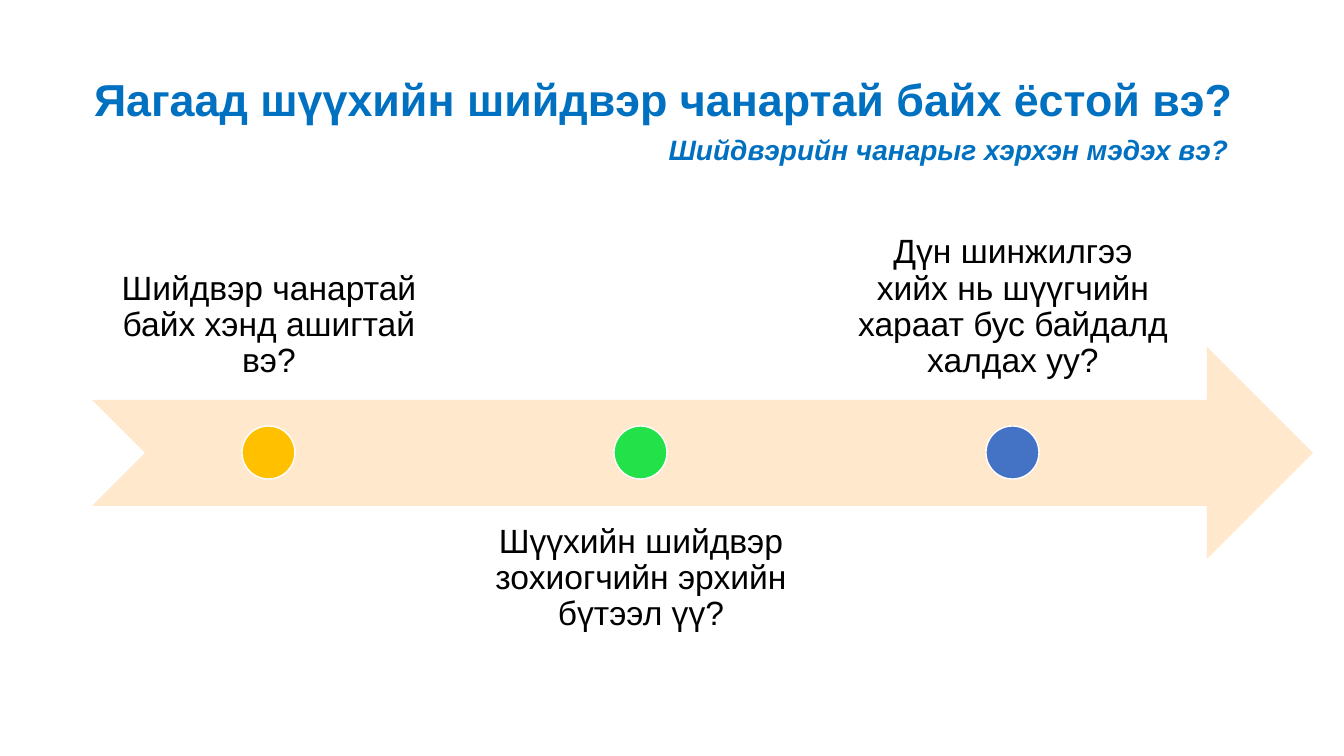
from dataclasses import dataclass

from pptx import Presentation
from pptx.dml.color import RGBColor
from pptx.enum.shapes import MSO_SHAPE
from pptx.enum.text import MSO_ANCHOR, MSO_AUTO_SIZE, PP_ALIGN
from pptx.shapes.autoshape import Shape
from pptx.slide import Slide
from pptx.util import Emu, Pt

EMU_PER_PX = 914400 / 100.8
COLOURS = {
    "heading": "0070C0",
    "label": "000000",
    "outline": "FFFFFF",
    "arrow": "FFE8CC",
    "amber": "FFC000",
    "green": "23E148",
    "blue": "4472C4",
}
ARROW_LEFT, ARROW_TOP, ARROW_WIDTH, BAND_HEIGHT = 92, 347, 1221, 212
QUESTION_WIDTH, QUESTION_PITCH = 354, 372
ABOVE_TOP, BELOW_TOP = 187, 505
DOT_SIZE = 53


@dataclass(frozen=True)
class Question:
    wording: str
    dot_colour: str
    above: bool


QUESTIONS = [
    Question("Шийдвэр чанартай байх хэнд ашигтай вэ?", "amber", True),
    Question("Шүүхийн шийдвэр зохиогчийн эрхийн бүтээл үү?", "green", False),
    Question("Дүн шинжилгээ хийх нь шүүгчийн хараат бус байдалд халдах уу?", "blue", True),
]


def px(length: int) -> Emu:
    return Emu(round(length * EMU_PER_PX))


def rgb(name: str) -> RGBColor:
    return RGBColor.from_string(COLOURS[name])


def write(holder: Shape, wording: str, size: int, colour: str, align: PP_ALIGN,
          anchor: MSO_ANCHOR, insets: tuple[int, int], bold: bool = False,
          italic: bool = False, spacing: float = 1.0) -> None:
    frame = holder.text_frame
    frame.word_wrap = True
    frame.auto_size = MSO_AUTO_SIZE.NONE
    frame.vertical_anchor = anchor
    frame.margin_left = frame.margin_right = px(insets[0])
    frame.margin_top = frame.margin_bottom = px(insets[1])
    frame.text = wording
    paragraph = frame.paragraphs[0]
    paragraph.alignment = align
    paragraph.line_spacing = spacing
    font = paragraph.font
    font.name, font.size = "Arial", Pt(size)
    font.bold, font.italic = bold, italic
    font.color.rgb = rgb(colour)


def draw_headings(slide: Slide) -> None:
    title = slide.shapes.title
    title.left, title.top, title.width, title.height = map(px, (94, 71, 1214, 55))
    write(title, "Яагаад шүүхийн шийдвэр чанартай байх ёстой вэ?", 32, "heading",
          PP_ALIGN.LEFT, MSO_ANCHOR.MIDDLE, (0, 0), bold=True)
    title.text_frame.paragraphs[0].space_before = Pt(1.1)
    subtitle = slide.shapes.add_textbox(*map(px, (591, 127, 715, 44)))
    write(subtitle, "Шийдвэрийн чанарыг хэрхэн мэдэх вэ?", 20, "heading",
          PP_ALIGN.CENTER, MSO_ANCHOR.TOP, (10, 5), bold=True, italic=True)


def draw_arrow(slide: Slide) -> None:
    arrow = slide.shapes.add_shape(
        MSO_SHAPE.NOTCHED_RIGHT_ARROW,
        *map(px, (ARROW_LEFT, ARROW_TOP, ARROW_WIDTH, BAND_HEIGHT)))
    arrow.shadow.inherit = False
    arrow.fill.solid()
    arrow.fill.fore_color.rgb = rgb("arrow")
    arrow.line.fill.background()


def draw_question(slide: Slide, question: Question, position: int) -> None:
    left = ARROW_LEFT + position * QUESTION_PITCH
    top = ABOVE_TOP if question.above else BELOW_TOP
    label = slide.shapes.add_textbox(
        *map(px, (left, top, QUESTION_WIDTH, BAND_HEIGHT)))
    anchor = MSO_ANCHOR.BOTTOM if question.above else MSO_ANCHOR.TOP
    write(label, question.wording, 24, "label", PP_ALIGN.CENTER, anchor,
          (21, 19), spacing=0.9)
    dot_left = left + (QUESTION_WIDTH - DOT_SIZE) // 2
    dot_top = ARROW_TOP + (BAND_HEIGHT - DOT_SIZE) // 2
    dot = slide.shapes.add_shape(
        MSO_SHAPE.OVAL, *map(px, (dot_left, dot_top, DOT_SIZE, DOT_SIZE)))
    dot.shadow.inherit = False
    dot.fill.solid()
    dot.fill.fore_color.rgb = rgb(question.dot_colour)
    dot.line.color.rgb = rgb("outline")
    dot.line.width = Pt(1)


def main() -> None:
    deck = Presentation()
    deck.slide_width, deck.slide_height = px(1344), px(756)
    slide = deck.slides.add_slide(deck.slide_layouts[5])
    draw_headings(slide)
    draw_arrow(slide)
    for position, question in enumerate(QUESTIONS):
        draw_question(slide, question, position)
    deck.save("out.pptx")


if __name__ == "__main__":
    main()
